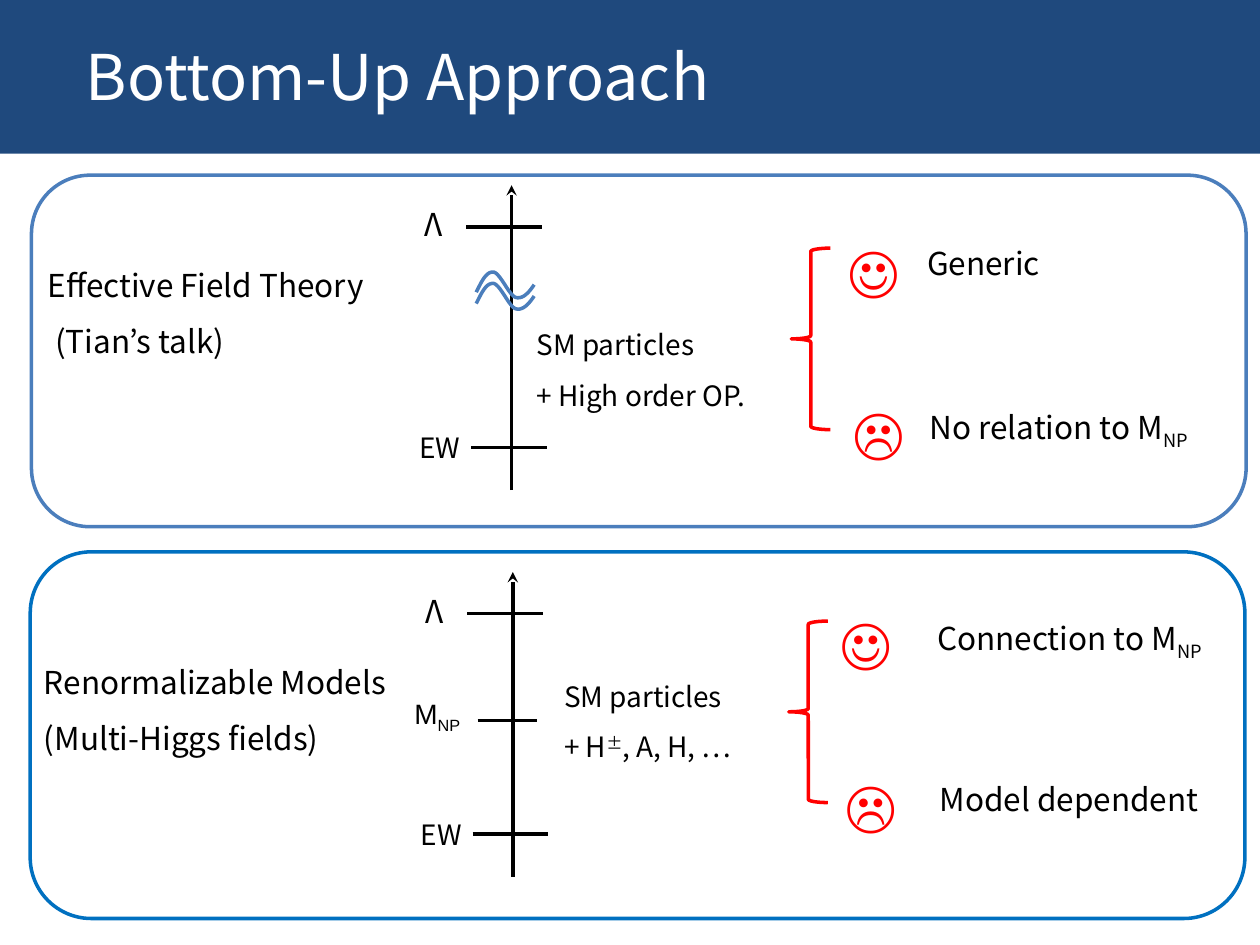
"""Build the slide that compares two bottom-up approaches to new physics."""
from lxml import etree
from pptx import Presentation
from pptx.dml.color import RGBColor
from pptx.enum.shapes import MSO_CONNECTOR, MSO_SHAPE
from pptx.enum.text import MSO_ANCHOR, MSO_AUTO_SIZE, PP_ALIGN
from pptx.oxml.ns import qn
from pptx.util import Inches, Pt

STRAIGHT = MSO_CONNECTOR.STRAIGHT
ROUNDED, BRACE = MSO_SHAPE.ROUNDED_RECTANGLE, MSO_SHAPE.LEFT_BRACE
MIDDLE, LEFT, NO_FIT = MSO_ANCHOR.MIDDLE, PP_ALIGN.LEFT, MSO_AUTO_SIZE.NONE

THEME = {
    "font": "Noto Sans CJK JP", "label_font": "Arial",
    "banner": "1F497D", "title": "FFFFFF", "text": "000000", "mark": "FF0000",
    "wave": "4B7EBC", "title_size": 36, "face_size": 32, "text_size": 18,
    "small_size": 16, "line": 2,
}

presentation = Presentation()
presentation.slide_width, presentation.slide_height = Inches(10), Inches(7.5)
COLUMN = presentation.slide_width / 100
ROW = presentation.slide_height / 75
slide = presentation.slides.add_slide(presentation.slide_layouts[5])
shapes = slide.shapes


def write(frame, lines, size=THEME["text_size"], color=THEME["text"],
          font=THEME["font"], bold=False, spacing=1.5, indents=()):
    """Fill a frame with lines; each line is a list of (text, baseline) runs."""
    for index, runs in enumerate(lines):
        paragraph = frame.paragraphs[0] if index == 0 else frame.add_paragraph()
        paragraph.alignment, paragraph.line_spacing = LEFT, spacing
        if index < len(indents):
            paragraph._p.get_or_add_pPr().set("marL", str(int(indents[index] * COLUMN)))
        for text, baseline in runs:
            run = paragraph.add_run()
            run.text = text
            run.font.size, run.font.bold = Pt(size), bold
            run.font.color.rgb = RGBColor.from_string(color)
            run.font.name = font
            properties = run._r.get_or_add_rPr()
            etree.SubElement(properties, qn("a:ea"), typeface=font)
            if baseline:
                properties.set("baseline", str(baseline * 1000))


def outline(shape, color, arrow=False):
    """Give a shape or connector a plain line without fill or shadow."""
    if hasattr(shape, "fill"):
        shape.fill.background()
    shape.line.color.rgb = RGBColor.from_string(color)
    shape.line.width = Pt(THEME["line"])
    if arrow:
        etree.SubElement(shape.line._get_or_add_ln(), qn("a:tailEnd"), type="stealth")
    etree.SubElement(shape._element.spPr, qn("a:effectLst"))


title = shapes.title
title.left, title.top = 0, int(-0.3 * ROW)
title.width, title.height = presentation.slide_width, int(12.5 * ROW)
title.fill.solid()
title.fill.fore_color.rgb = RGBColor.from_string(THEME["banner"])
title.text_frame.auto_size = NO_FIT
title.text_frame.vertical_anchor = MIDDLE
title.text_frame.margin_left = int(6.8 * COLUMN)
write(title.text_frame, [[("Bottom-Up Approach", 0)]], THEME["title_size"],
      THEME["title"], spacing=1)

SMALL = {"size": THEME["small_size"]}
LABEL = {**SMALL, "spacing": 1}
FACE = {"size": THEME["face_size"], "color": THEME["mark"], "bold": True}
NP = ("NP", -25)

panels = [
    {"frame": (2.5, 13.9, 96.4, 27.9), "color": THEME["wave"],
     "axis": (40.6, 14.7), "brace": (62.8, 19.7), "faces": (66.3, 66.7),
     "ticks": [(37, 6, 3.3), (37.4, 6, 20.8)],
     "texts": [
         ((2.8, 19.1, 30.3, 9.7), [[("Effective Field Theory", 0)], [("(Tian’s talk)", 0)]],
          {"indents": (0, 0.6)}),
         ((41.6, 24.2, 20.4, 8.8), [[("SM particles", 0)], [("+ High order OP.", 0)]], SMALL),
         ((72.6, 17.4, 11.3, 5.2), [[("Generic", 0)]], {}),
         ((72.8, 30.2, 24.1, 5.2), [[("No relation to M", 0), NP]], {}),
     ]},
    {"frame": (2.4, 43.8, 96.4, 29.1), "color": "0070C0",
     "axis": (40.7, 45.4), "brace": (62.6, 49.3), "faces": (65.7, 66.1),
     "ticks": [(37.1, 6, 3.3), (37.9, 4.7, 11.8), (37.5, 6, 20.8)],
     "texts": [
         ((2.5, 50.6, 30.2, 9.7), [[("Renormalizable Models", 0)], [("(Multi-Higgs fields)", 0)]], {}),
         ((43.8, 52.1, 17.7, 8.8),
          [[("SM particles", 0)], [("+ H", 0), ("±", 30), (", A, H, …", 0)]], SMALL),
         ((31.9, 54.8, 5.9, 3.7), [[("M", 0), NP]], {**LABEL, "font": THEME["label_font"]}),
         ((73.4, 46.9, 24.3, 5.2), [[("Connection to M", 0), NP]], {}),
         ((73.6, 59.9, 23.2, 5.2), [[("Model dependent", 0)]], {}),
     ]},
]

for panel in panels:
    axis_x, axis_top = panel["axis"]
    brace_x, brace_top = panel["brace"]
    smile_x, frown_x = panel["faces"]
    for kind, (left, top, width, height), color in (
        (ROUNDED, panel["frame"], panel["color"]),
        (BRACE, (brace_x, brace_top, 3.1, 14.4), THEME["mark"]),
    ):
        outline(shapes.add_shape(kind, int(left * COLUMN), int(top * ROW),
                                 int(width * COLUMN), int(height * ROW)), color)

    segments = [(axis_x, axis_top + 24.2, axis_x, axis_top, True)]
    for left, length, drop in panel["ticks"]:
        segments.append((left, axis_top + drop, left + length, axis_top + drop, False))
    for start_x, start_y, end_x, end_y, arrow in segments:
        outline(shapes.add_connector(STRAIGHT, int(start_x * COLUMN), int(start_y * ROW),
                                     int(end_x * COLUMN), int(end_y * ROW)),
                THEME["text"], arrow)

    texts = panel["texts"] + [
        ((axis_x - 7.9, axis_top + 1.1, 3.9, 4), [[("Λ", 0)]], {"spacing": 1}),
        ((axis_x - 8.3, axis_top + 19, 5.6, 3.7), [[("EW", 0)]], LABEL),
        ((smile_x, brace_top - 4.2, 5.9, 8.4), [[("☺", 0)]], FACE),
        ((frown_x, brace_top + 8.7, 5.9, 8.4), [[("☹", 0)]], FACE),
    ]
    for (left, top, width, height), lines, style in texts:
        box = shapes.add_textbox(int(left * COLUMN), int(top * ROW),
                                 int(width * COLUMN), int(height * ROW))
        box.text_frame.word_wrap = False
        write(box.text_frame, lines, **style)

WAVE = [(37.8, 23.2), (38.2, 22.4), (38.6, 21.5), (39.2, 21.6), (39.7, 21.7),
        (40.4, 23.4), (40.9, 23.6), (41.5, 23.8), (42, 23.2), (42.4, 22.6)]
STEPS = 10
curve = [WAVE[0]]
for first in range(0, len(WAVE) - 1, 3):
    for step in range(1, STEPS + 1):
        share = step / STEPS
        weights = [(1 - share) ** 3, 3 * share * (1 - share) ** 2,
                   3 * share ** 2 * (1 - share), share ** 3]
        curve.append(tuple(sum(weight * point[axis] for weight, point
                               in zip(weights, WAVE[first:first + 4])) for axis in (0, 1)))
for shift in (0.9, 0):
    points = [(x * COLUMN, (y + shift) * ROW) for x, y in curve]
    builder = shapes.build_freeform(int(points[0][0]), int(points[0][1]))
    builder.add_line_segments(points[1:], close=False)
    outline(builder.convert_to_shape(), THEME["wave"])

presentation.save("out.pptx")
